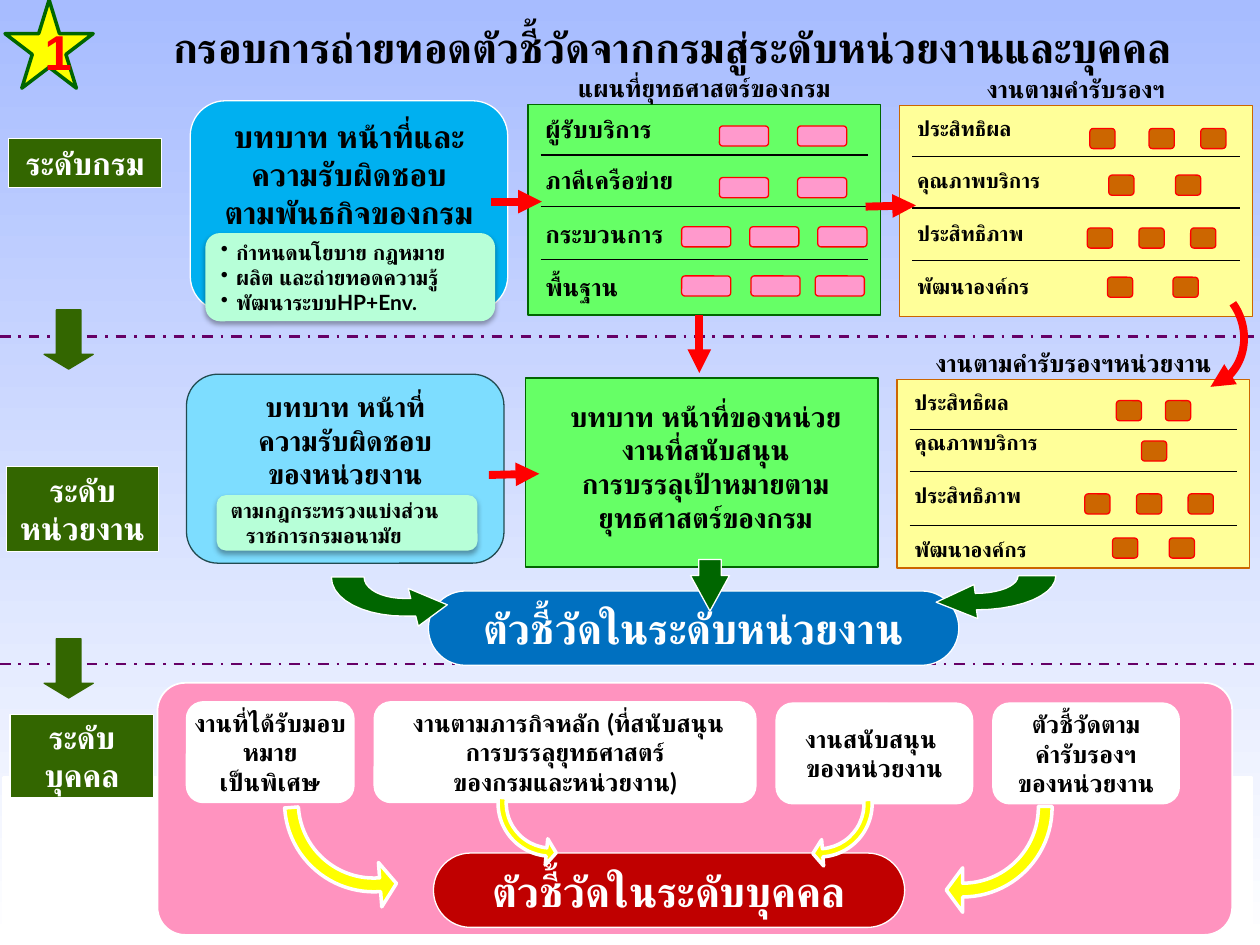
from pptx import Presentation
from pptx.dml.color import RGBColor as Rgb
from pptx.enum.dml import MSO_LINE as Dash
from pptx.enum.shapes import MSO_CONNECTOR as Conn, MSO_SHAPE as Kind
from pptx.enum.text import MSO_ANCHOR as Anchor, PP_ALIGN as Align
from pptx.oxml import parse_xml
from pptx.oxml.ns import nsdecls, qn
from pptx.util import Inches, Pt

HUE = dict(
    white="FFFFFF", black="000000", sky="A7BCFF", plum="660066", moss="336600",
    rose="FF93BF", wine="C00000", azure="00B0F0", pale="7DDDFF", teal="224B50",
    lime="66FF66", leaf="006600", pink="FF99CC", red="FF0000", cream="FFFF99",
    brown="CC6600", mint="B7FFD8", blue="0070C0", gold="FFFF00")
RECT, ROUND, ALT = Kind.RECTANGLE, Kind.ROUNDED_RECTANGLE, Kind.FLOWCHART_ALTERNATE_PROCESS
DOWN, BENT = Kind.DOWN_ARROW, Kind.BENT_ARROW

deck = Presentation()
deck.slide_width, deck.slide_height = Inches(10), Inches(7.5)
slide = deck.slides.add_slide(deck.slide_layouts[6])
shapes = slide.shapes
cell = deck.slide_width // 10  # square grid: 10 columns by 7.5 rows


def put(kind, box, fill=None, edge=None, text="", width=0.75, adj=(), turn=0, size=14,
        hue="black", face="Lato", align=Align.CENTER, anchor=Anchor.MIDDLE,
        wrap=True, pad=0.1):
    """Place a shape, or a text box when kind is None, on the grid."""
    box = [round(v * cell) for v in box]
    item = shapes.add_shape(kind, *box) if kind else shapes.add_textbox(*box)
    if kind:
        item.shadow.inherit = False
        item.rotation = turn
        for i, v in enumerate(adj):
            item.adjustments[i] = v
        if fill:
            item.fill.solid()
            item.fill.fore_color.rgb = Rgb.from_string(HUE[fill])
        else:
            item.fill.background()
        if edge:
            item.line.color.rgb = Rgb.from_string(HUE[edge])
            item.line.width = Pt(width)
        else:
            item.line.fill.background()
    if text:
        frame = item.text_frame
        frame.text = text
        form = dict(word_wrap=wrap, vertical_anchor=anchor,
                    margin_left=Inches(pad), margin_right=Inches(pad))
        for key, val in form.items():
            setattr(frame, key, val)
        for para in frame.paragraphs:
            para.alignment = align
            for run in para.runs:
                for key, val in dict(size=Pt(size), name=face, bold=True).items():
                    setattr(run.font, key, val)
                run.font.color.rgb = Rgb.from_string(HUE[hue])
    return item


def wire(ends, hue="black", width=0.75, tip=False, dash=None):
    """Draw a straight line, with an arrowhead at its end if tip is set."""
    item = shapes.add_connector(Conn.STRAIGHT, *[round(v * cell) for v in ends])
    item.line.color.rgb = Rgb.from_string(HUE[hue])
    item.line.width = Pt(width)
    if dash:
        item.line.dash_style = dash
    if tip:
        item.line._get_or_add_ln().append(
            parse_xml(f'<a:tailEnd {nsdecls("a")} type="triangle"/>'))
    item._element.spPr.append(parse_xml(f'<a:effectLst {nsdecls("a")}/>'))


# Background and level bands
back = slide.background.fill
back.gradient()
back.gradient_angle = 270
for stop, hue, spot in zip(back.gradient_stops, ("sky", "white"), (0, 1)):
    stop.color.rgb = Rgb.from_string(HUE[hue])
    stop.position = spot
put(RECT, (0.03, 6.17, 9.9, 1.3), "white", "white", width=2)
for y in (2.67, 5.27):
    wire((0, y, 10, y), "plum", 1.5, dash=Dash.DASH_DOT)
put(None, (0.67, 0.12, 9.33, 0.5), text="กรอบการถ่ายทอดตัวชี้วัดจากกรมสู่ระดับหน่วยงานและบุคคล",
    size=24, anchor=Anchor.TOP)
for box, text in [((0.07, 1.1, 1.21, 0.39), "ระดับกรม"),
                  ((0.05, 3.7, 1.21, 0.68), "ระดับ\vหน่วยงาน"),
                  ((0.08, 5.67, 1.14, 0.66), "ระดับ\nบุคคล")]:
    put(RECT, box, "moss", "white", text, size=18, hue="white", face="Arial", wrap=False)
for y in (2.46, 5.07):
    put(DOWN, (0.35, y, 0.39, 0.47), "moss", "moss", adj=(0.5, 0.3))

# Personal level
put(ROUND, (1.25, 5.42, 8.53, 2), "rose", "white", width=1, adj=[0.11])
for x, y, w, pad, text in [
        (2.97, 5.57, 3.03, 0.1, " งานตามภารกิจหลัก (ที่สนับสนุน\nการบรรลุยุทธศาสตร์\nของกรมและหน่วยงาน)"),
        (1.48, 5.57, 1.33, 0, "งานที่ได้รับมอบหมาย\nเป็นพิเศษ"),
        (7.88, 5.58, 1.48, 0, "ตัวชี้วัดตาม\nคำรับรองฯ\nของหน่วยงาน"),
        (6.16, 5.58, 1.56, 0, "งานสนับสนุน \nของหน่วยงาน")]:
    put(ROUND, (x, y, w, 0.8), "white", "white", text, pad=pad, wrap=not pad)

# Role boxes
for box, fill, edge, size, text in [
        ((1.51, 0.8, 2.52, 1.67), "azure", "white", 18,
         "บทบาท หน้าที่และ\nความรับผิดชอบ\vตามพันธกิจของกรม"),
        ((1.48, 2.97, 2.52, 1.5), "pale", "teal", 16,
         "บทบาท หน้าที่\nความรับผิดชอบ\vของหน่วยงาน")]:
    put(ROUND, box, fill, edge, text, size=size, anchor=Anchor.TOP, wrap=False)
put(RECT, (4.17, 3, 2.8, 1.5), "lime", "leaf")
put(None, (4.35, 3.12, 2.5, 1.18), size=16, anchor=Anchor.TOP,
    text="บทบาท หน้าที่ของหน่วยงานที่สนับสนุน\vการบรรลุเป้าหมายตามยุทธศาสตร์ของกรม")

# Panels: each row has a label, its offset, the chip offset and the chip columns
tasks = "ประสิทธิผล", "คุณภาพบริการ", "ประสิทธิภาพ", "พัฒนาองค์กร"
views = "ผู้รับบริการ", "ภาคีเครือข่าย", "กระบวนการ", "พื้นฐาน"
high, low = (0.4, 0.81, 1.23), (0.4, 0.73, 1.16)
trio = (1.49, 1.9, 2.31)
green = dict(fill="lime", edge="leaf", chip="pink", wide=0.39, size=14)
yellow = dict(fill="cream", edge="brown", chip="brown", wide=0.2, size=12)
for x, top, tall, look, title, names, rules, drops, chips, cols in [
        (4.19, 0.83, 1.67, green, "แผนที่ยุทธศาสตร์ของกรม", views, high,
         (0.03, 0.43, 0.86, 1.28), (0.17, 0.58, 0.97, 1.36),
         [(1.52, 2.14), (1.52, 2.14), (1.22, 1.76, 2.3), (1.22, 1.77, 2.28)]),
        (7.14, 0.84, 1.67, yellow, "งานตามคำรับรองฯ", tasks, high,
         (0.03, 0.44, 0.86, 1.28), (0.18, 0.55, 0.97, 1.36),
         [(1.51, 1.98, 2.39), (1.66, 2.19), trio, (1.65, 2.17)]),
        (7.12, 3.01, 1.5, yellow, "งานตามคำรับรองฯหน่วยงาน", tasks, low,
         (0.03, 0.35, 0.77, 1.2), (0.17, 0.49, 0.91, 1.26),
         [(1.74, 2.13), (1.94,), trio, (1.71, 2.16)])]:
    put(RECT, (x, top, 2.8, tall), look["fill"], look["edge"])
    put(None, (x, top - 0.3, 2.8, 0.34), text=title, face="Arial", anchor=Anchor.TOP)
    for y in rules:
        wire((x + 0.1, top + y, x + 2.7, top + y))
    for name, drop, chip, row in zip(names, drops, chips, cols):
        put(None, (x + 0.04, top + drop, 1.4, 0.3), text=name, size=look["size"],
            align=Align.LEFT, anchor=Anchor.TOP)
        for col in row:
            put(ROUND, (x + col, top + chip, look["wide"], 0.16), look["chip"], "red")

# Mint notes with a soft shadow
for box, dot, text in [
        ((1.63, 1.85, 2.3, 0.7), True,
         "กำหนดนโยบาย กฎหมาย\nผลิต และถ่ายทอดความรู้\nพัฒนาระบบHP+Env."),
        ((1.72, 3.93, 2.07, 0.44), False, "ตามกฎกระทรวงแบ่งส่วนราชการกรมอนามัย")]:
    note = put(ALT, box, "mint", text=text, size=12, align=Align.LEFT, pad=0.09)
    note._element.spPr.find(qn("a:effectLst")).append(parse_xml(
        f'<a:outerShdw {nsdecls("a")} blurRad="{Pt(3.1)}" dist="{Pt(1.8)}" dir="5400000" '
        'rotWithShape="0"><a:srgbClr val="000000"><a:alpha val="35000"/></a:srgbClr>'
        '</a:outerShdw>'))
    for para in note.text_frame.paragraphs:
        prop = para._p.get_or_add_pPr()
        prop.set("marL", str(Inches(0.12)))
        prop.set("indent", str(-Inches(0.12)))
        if dot:
            prop.append(parse_xml(f'<a:buChar {nsdecls("a")} char="•"/>'))

# Result bars
for box, fill, text in [((3.44, 6.77, 3.74, 0.59), "wine", "ตัวชี้วัดในระดับบุคคล"),
                        ((3.4, 4.69, 4.21, 0.59), "blue", "ตัวชี้วัดในระดับหน่วยงาน")]:
    put(ROUND, box, fill, "white", text, adj=[0.5], size=24, hue="white", wrap=False)

# Swept green arrows: pairs are straight steps, sixes are Bezier curves
for start, steps in [
        ((3.26, 4.75), [(3.24, 4.75, 3.23, 4.75, 3.21, 4.75), (3.04, 4.75, 2.89, 4.68, 2.89, 4.58),
                        (2.63, 4.58), (2.63, 4.76, 2.89, 4.89, 3.21, 4.89),
                        (3.24, 4.89, 3.27, 4.89, 3.3, 4.89), (3.32, 4.97), (3.55, 4.8),
                        (3.24, 4.67)]),
        ((7.74, 4.71), [(7.93, 4.71, 8.08, 4.65, 8.08, 4.57), (8.38, 4.57),
                        (8.38, 4.72, 8.1, 4.84, 7.75, 4.84), (7.76, 4.91), (7.43, 4.78),
                        (7.73, 4.64)])]:
    spots = [start]
    for step in steps:
        if len(step) == 2:
            spots.append(step)
            continue
        ctrl = [spots[-1], step[:2], step[2:4], step[4:]]
        for t in (n / 10 for n in range(1, 11)):
            mix = (1 - t) ** 3, 3 * t * (1 - t) ** 2, 3 * t * t * (1 - t), t ** 3
            spots.append(tuple(sum(m * p[i] for m, p in zip(mix, ctrl)) for i in (0, 1)))
    spots = [(round(a * cell), round(b * cell)) for a, b in spots]
    pen = shapes.build_freeform(*spots[0])
    pen.add_line_segments(spots[1:], close=True)
    sweep = pen.convert_to_shape()
    sweep.shadow.inherit = False
    sweep.fill.solid()
    sweep.fill.fore_color.rgb = Rgb.from_string(HUE["leaf"])
    sweep.line.color.rgb = Rgb.from_string(HUE["white"])
    sweep.line.width = Pt(0.75)
put(DOWN, (5.48, 4.44, 0.31, 0.41), "leaf", "white", adj=(0.58, 0.91))

# Red links
for ends in [(3.9, 1.6, 4.3, 1.6), (6.87, 1.64, 7.27, 1.63),
             (3.88, 3.77, 4.28, 3.76), (5.55, 2.5, 5.55, 2.96)]:
    wire(ends, "red", 4.5, tip=True)
arc = put(Kind.ARC, (9.05, 2.27, 0.86, 0.78), edge="red", width=4.5, adj=(148.53, 0), turn=72.8)
arc.line._get_or_add_ln().append(parse_xml(f'<a:tailEnd {nsdecls("a")} type="triangle"/>'))

# Yellow bent arrows
for x, y, side, turn, flip in [(7.51, 6.4, 0.84, 180, False), (6.44, 6.36, 0.5, 175.7, False),
                               (2.29, 6.38, 0.84, 175.7, True), (3.93, 6.35, 0.5, 185.6, True)]:
    bend = put(BENT, (x, y, side, side), "gold", "white", width=2,
               adj=(0.13, 0.21, 0.155, 0.855), turn=turn)
    if flip:
        bend._element.spPr.xfrm.set("flipH", "1")

put(Kind.STAR_5_POINT, (0.04, 0, 0.7, 0.7), "gold", "leaf", "1", width=2, size=28,
    hue="red", face="Arial")
deck.save("out.pptx")
